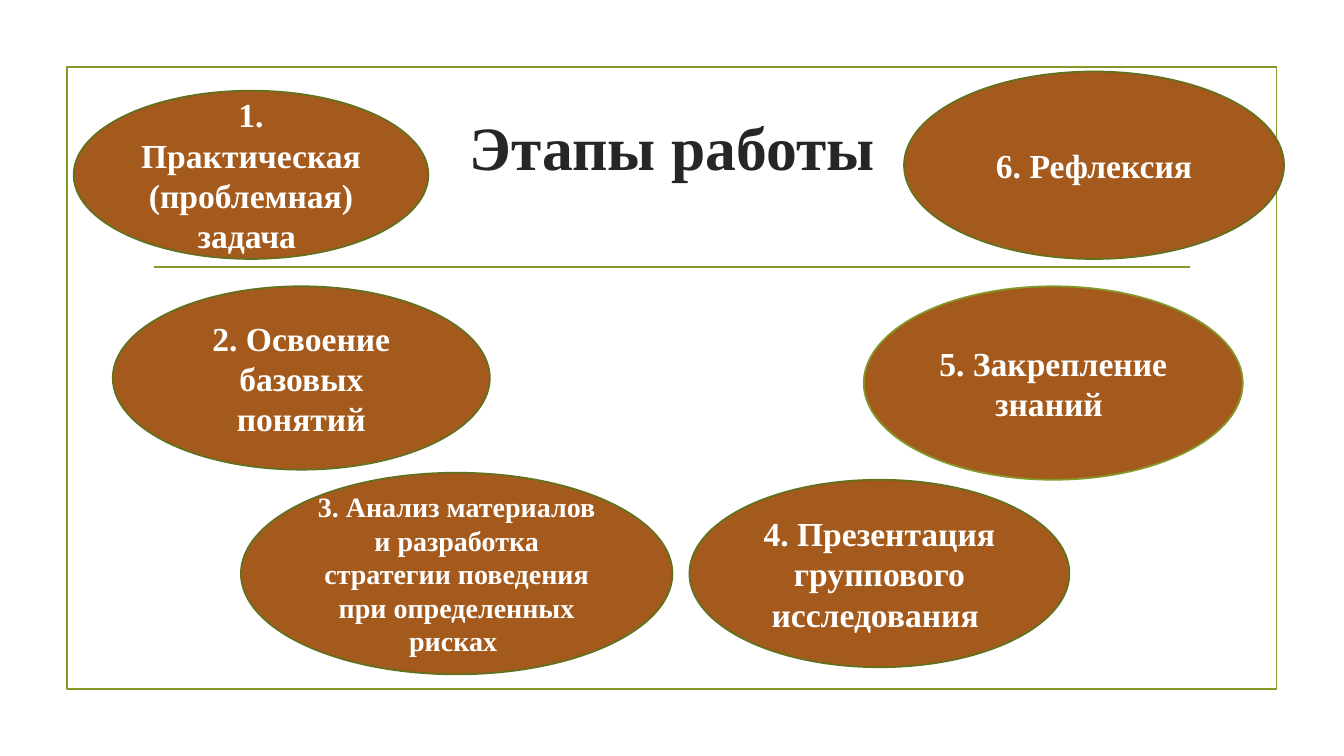
from pptx import Presentation
from pptx.dml.color import RGBColor
from pptx.enum.shapes import MSO_CONNECTOR, MSO_SHAPE
from pptx.enum.text import MSO_ANCHOR, PP_ALIGN
from pptx.oxml.ns import qn
from pptx.util import Pt
from lxml import etree

RECT, OVAL = MSO_SHAPE.RECTANGLE, MSO_SHAPE.OVAL
STRAIGHT = MSO_CONNECTOR.STRAIGHT
MIDDLE, CENTER = MSO_ANCHOR.MIDDLE, PP_ALIGN.CENTER
FONT = "Times New Roman"
COLORS = {
    "olive": "83992A",
    "dark_olive": "61711F",
    "brown": "A45A1D",
    "title": "262626",
    "white": "FFFFFF",
}
STAGES = [
    ("1. Практическая (проблемная) задача ", (52.6, 64.8, 253.4, 120.2), {}),
    ("5. Закрепление знаний ", (617, 204.5, 270.7, 138.2), {"line": "olive"}),
    ("2. Освоение базовых понятий", (80.6, 204.5, 269.3, 131), {}),
    ("3. Анализ материалов и разработка стратегии поведения при определенных рисках ",
     (172.1, 337.7, 308.2, 144), {"size": 20}),
    ("4. Презентация группового исследования ", (492.5, 342.7, 271.4, 133.9), {}),
    ("6. Рефлексия", (645.8, 51.1, 271.4, 133.9), {}),
]


def rgb(name):
    """Return the named colour."""
    return RGBColor.from_string(COLORS[name])


def set_line(shape, color):
    """Give a shape or connector its outline."""
    shape.line.color.rgb = rgb(color)
    shape.line.width = Pt(1.25)


def write_text(shape, text, size=24, color="white"):
    """Write one bold centred paragraph into a shape."""
    tf = shape.text_frame
    tf.word_wrap = True
    tf.vertical_anchor = MIDDLE
    p = tf.paragraphs[0]
    p.alignment = CENTER
    p.line_spacing = 1.0
    r = p.add_run()
    r.text = text
    r.font.name = FONT
    r.font.size = Pt(size)
    r.font.bold = True
    r.font.color.rgb = rgb(color)


def add_title(s, text, box):
    """Place and format the title placeholder."""
    title = s.shapes.title
    title.left, title.top, title.width, title.height = map(Pt, box)
    write_text(title, text, size=44, color="title")


def add_outlined(s, kind, box, line, fill=None):
    """Add an outlined preset shape, with or without a fill."""
    sp = s.shapes.add_shape(kind, *map(Pt, box))
    sp.shadow.inherit = False
    if fill:
        sp.fill.solid()
        sp.fill.fore_color.rgb = rgb(fill)
    else:
        sp.fill.background()
    set_line(sp, line)
    return sp


def add_rule(s, x1, x2, y):
    """Add a horizontal rule."""
    rule = s.shapes.add_connector(STRAIGHT, Pt(x1), Pt(y), Pt(x2), Pt(y))
    set_line(rule, "olive")
    etree.SubElement(rule._element.spPr, qn("a:effectLst"))


def add_stage(s, text, box, size=24, line="dark_olive"):
    """Add one stage of the work as a brown oval."""
    sp = add_outlined(s, OVAL, box, line, fill="brown")
    write_text(sp, text, size=size)


def main():
    """Build the slide with the six stages."""
    prs = Presentation()
    prs.slide_width, prs.slide_height = Pt(960), Pt(540)
    s = prs.slides.add_slide(prs.slide_layouts[5])
    add_outlined(s, RECT, (47.75, 48, 864, 444), "olive")
    add_rule(s, 110.25, 850.25, 190.75)
    add_title(s, "Этапы работы", (102.25, 58.3, 756, 91.4))
    for text, box, style in STAGES:
        add_stage(s, text, box, **style)
    prs.save("out.pptx")


if __name__ == "__main__":
    main()
